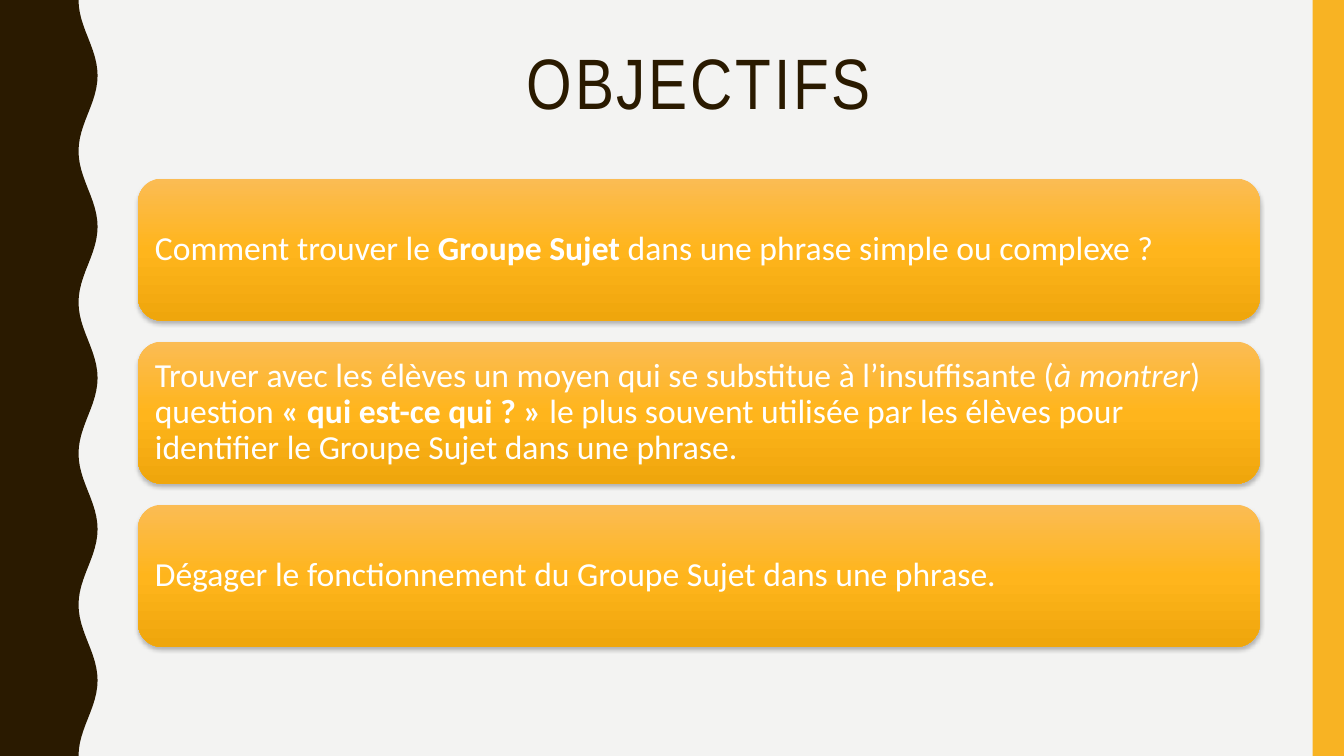
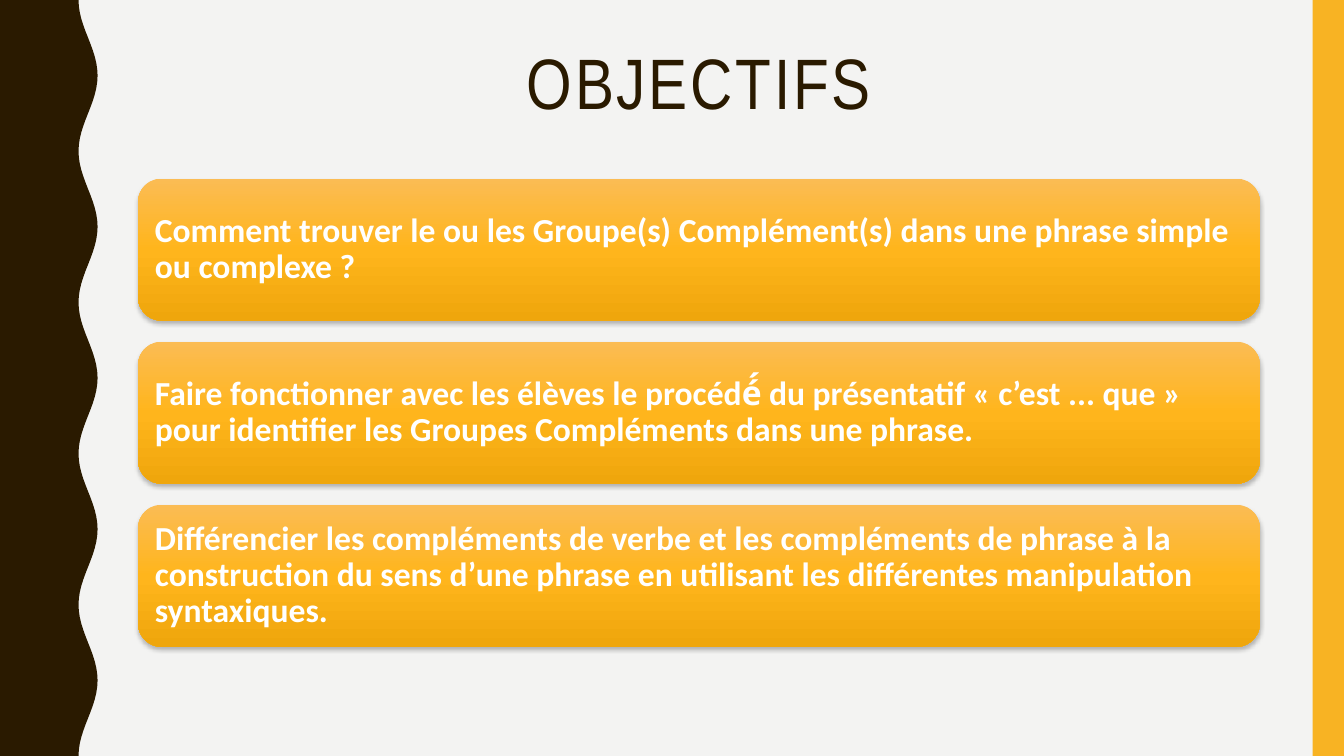
from dataclasses import dataclass
from math import cos, pi

from copy import deepcopy
from lxml import etree
from pptx import Presentation
from pptx.dml.color import RGBColor
from pptx.enum import shapes, text
from pptx.oxml import ns
from pptx.util import Cm, Pt


@dataclass(frozen=True)
class Theme:
    background: str = "F3F3F2"
    dark: str = "2A1A00"
    accent: str = "F8B323"
    card_text: str = "FFFFFF"
    card_gradient: tuple = ((0, "FBBC54"), (0.5, "FFB51C"), (1, "EFA60C"))
    title_font: str = "Arial Narrow"
    body_font: str = "Calibri"
    title_size: int = 51
    body_size: int = 24
    line_spacing: float = 0.9


WIDTH, HEIGHT = 33.87, 19.05
LEFT, CONTENT_WIDTH = 3.48, 28.27
TITLE_TOP, TITLE_HEIGHT = 1.07, 4.14
CARD_TOP, CARD_HEIGHT, CARD_PITCH = 4.5, 3.58, 4.11
BAND_WIDTH = 0.79
WAVE_MIDDLE, WAVE_DEPTH, WAVE_COUNT, WAVE_STEPS = 2.22, 0.24, 5, 24

PLAIN, BOLD, ITALIC = "plain", "bold", "italic"


class Deck:
    def __init__(self, theme):
        self.theme = theme
        self.prs = Presentation()
        self.prs.slide_width, self.prs.slide_height = Cm(WIDTH), Cm(HEIGHT)
        self.layout = self.prs.slide_layouts.get_by_name("Title Only")
        fill = self.layout.background.fill
        fill.solid()
        fill.fore_color.rgb = RGBColor.from_string(theme.background)
        self.slide = None

    def new_slide(self, heading):
        self.slide = self.prs.slides.add_slide(self.layout)
        self.wave()
        self.band()
        self.title(heading)

    def paint(self, shape, color):
        shape.shadow.inherit = False
        shape.fill.solid()
        shape.fill.fore_color.rgb = RGBColor.from_string(color)
        shape.line.fill.background()

    def style(self, paragraph, font, size, color):
        paragraph.line_spacing = self.theme.line_spacing
        paragraph.font.name = font
        paragraph.font.size = Pt(size)
        paragraph.font.color.rgb = RGBColor.from_string(color)

    def wave(self):
        """Draw the dark left edge with its wavy outline."""
        count = WAVE_COUNT * WAVE_STEPS
        edge = [(Cm(WAVE_MIDDLE - WAVE_DEPTH * cos(2 * pi * i / WAVE_STEPS)),
                 Cm(HEIGHT * i / count)) for i in range(count + 1)]
        outline = self.slide.shapes.build_freeform(0, 0)
        outline.add_line_segments(edge + [(0, Cm(HEIGHT))], close=True)
        self.paint(outline.convert_to_shape(), self.theme.dark)

    def band(self):
        band = self.slide.shapes.add_shape(
            shapes.MSO_SHAPE.RECTANGLE, Cm(WIDTH - BAND_WIDTH), 0,
            Cm(BAND_WIDTH), Cm(HEIGHT))
        self.paint(band, self.theme.accent)

    def title(self, heading):
        title = self.slide.shapes.title
        title.left, title.top = Cm(LEFT), Cm(TITLE_TOP)
        title.width, title.height = Cm(CONTENT_WIDTH), Cm(TITLE_HEIGHT)
        frame = title.text_frame
        frame.text = heading
        frame.vertical_anchor = text.MSO_ANCHOR.TOP
        paragraph = frame.paragraphs[0]
        paragraph.alignment = text.PP_ALIGN.CENTER
        self.style(paragraph, self.theme.title_font, self.theme.title_size,
                   self.theme.dark)
        for run in paragraph.runs:
            run.font._element.set("spc", "200")

    def card_surface(self, card):
        """Give a card its three-stop gradient and soft shadow."""
        card.line.fill.background()
        card.fill.gradient()
        card.fill.gradient_angle = 270
        stop_list = card._element.xpath(".//a:gsLst")[0]
        stop_list.append(deepcopy(stop_list[-1]))
        for stop, (position, color) in zip(card.fill.gradient_stops,
                                           self.theme.card_gradient):
            stop.position = position
            stop.color.rgb = RGBColor.from_string(color)

        card.shadow.inherit = False
        effects = card._element.spPr.find(ns.qn("a:effectLst"))
        shadow = etree.SubElement(
            effects, ns.qn("a:outerShdw"), blurRad=str(Pt(3)),
            dist=str(Pt(2)), dir="5400000", algn="ctr", rotWithShape="0")
        color = etree.SubElement(shadow, ns.qn("a:srgbClr"), val="000000")
        etree.SubElement(color, ns.qn("a:alpha"), val="25000")

    def card(self, row, phrases):
        card = self.slide.shapes.add_shape(
            shapes.MSO_SHAPE.ROUNDED_RECTANGLE, Cm(LEFT),
            Cm(CARD_TOP + row * CARD_PITCH), Cm(CONTENT_WIDTH), Cm(CARD_HEIGHT))
        self.card_surface(card)
        frame = card.text_frame
        frame.word_wrap = True
        frame.vertical_anchor = text.MSO_ANCHOR.MIDDLE
        frame.margin_left = frame.margin_right = Cm(0.25)
        frame.margin_top = frame.margin_bottom = Cm(0.25)
        paragraph = frame.paragraphs[0]
        paragraph.alignment = text.PP_ALIGN.LEFT
        self.style(paragraph, self.theme.body_font, self.theme.body_size,
                   self.theme.card_text)
        for words, emphasis in phrases:
            run = paragraph.add_run()
            run.text = words
            if emphasis == BOLD:
                run.font.bold = True
            elif emphasis == ITALIC:
                run.font.italic = True


SUBJECT_GOALS = [
    [("Comment trouver le ", PLAIN), ("Groupe Sujet", BOLD),
     (" dans une phrase simple ou complexe ?", PLAIN)],
    [("Trouver avec les élèves un moyen qui se substitue à l’insuffisante (", PLAIN),
     ("à montrer", ITALIC), (") question ", PLAIN),
     ("« qui est-ce qui ? » ", BOLD),
     ("le plus souvent utilisée par les élèves pour identifier le Groupe Sujet "
      "dans une phrase.", PLAIN)],
    [("Dégager le fonctionnement du Groupe Sujet dans une phrase.", PLAIN)],
]
COMPLEMENT_GOALS = [
    [("Comment trouver le ou les Groupe(s) Complément(s) dans une phrase simple "
      "ou complexe ?", BOLD)],
    [("Faire fonctionner avec les élèves le procédé́ du présentatif "
      "« c’est ... que » pour identifier les Groupes Compléments dans une "
      "phrase.", BOLD)],
    [("Différencier les compléments de verbe et les compléments de phrase à la "
      "construction du sens d’une phrase en utilisant les différentes "
      "manipulation syntaxiques.", BOLD)],
]


def main():
    deck = Deck(Theme())
    for goals in (SUBJECT_GOALS, COMPLEMENT_GOALS):
        deck.new_slide("OBJECTIFS")
        for row, phrases in enumerate(goals):
            deck.card(row, phrases)
    deck.prs.save("out.pptx")


if __name__ == "__main__":
    main()
